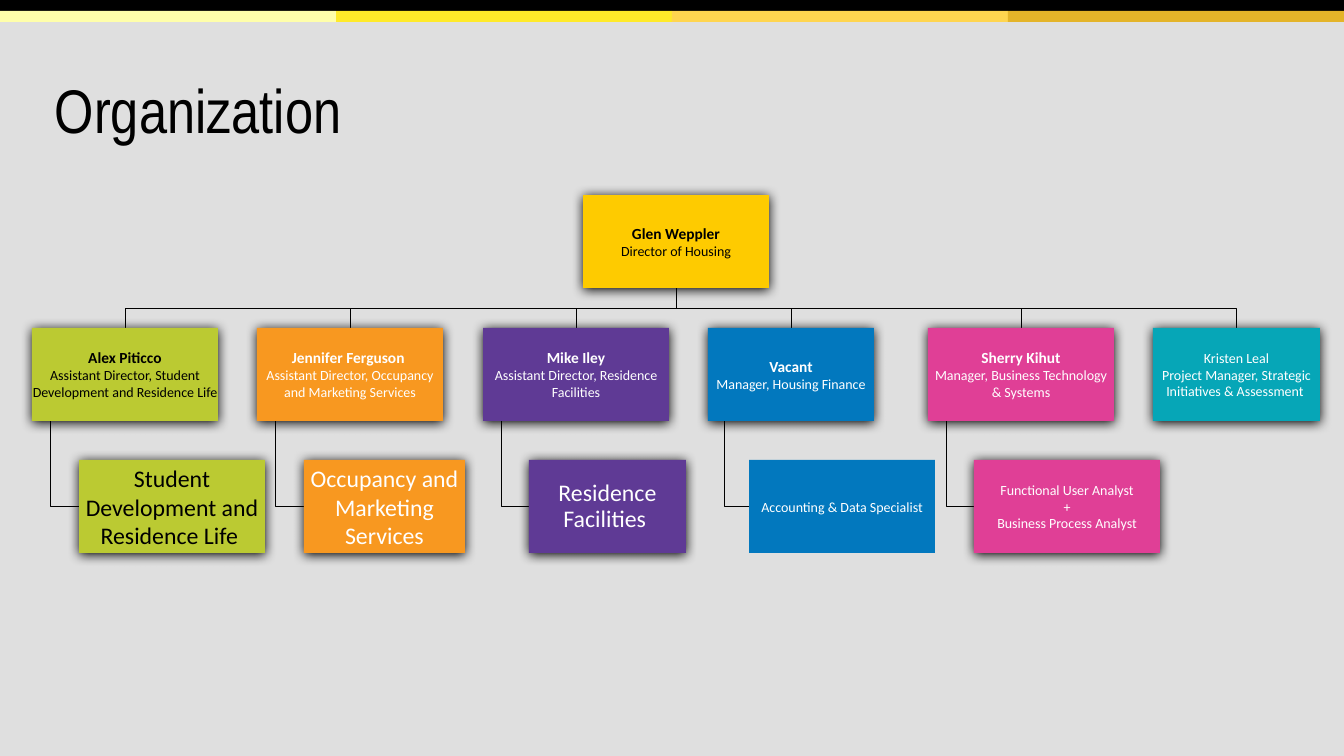
import pptx
import pptx.util
import pptx.dml.color
import pptx.enum.shapes
import pptx.enum.text
from lxml import etree

TITLE = "Organization"

# Text lines are (style, text) or (style, text, left shift of the centred line in px).
DIRECTOR = {"left": 583, "width": 186, "fill": "gold", "ink": "black", "lines": [
    ("name", "Glen Weppler", 9), ("role", "Director of Housing")]}

# Each branch: fill, ink, manager (left, width, lines), team (left, width, lines) or None.
BRANCHES = [
    ("lime", "black",
     (32, 186, [("name", "Alex Piticco", 12),
                ("role", "Assistant Director, Student Development and Residence Life")]),
     (79, 186, [("unit", "Student Development and Residence Life ")])),
    ("orange", "white",
     (257, 186, [("name", "Jennifer Ferguson "),
                 ("role", "Assistant Director, Occupancy and Marketing Services")]),
     (304, 161, [("unit", "Occupancy and Marketing Services")])),
    ("purple", "white",
     (483, 186, [("name", "Mike Iley"),
                 ("role", "Assistant Director, Residence Facilities")]),
     (529, 157, [("tight unit", "Residence Facilities ")])),
    ("blue", "white",
     (708, 166, [("name", "Vacant"), ("role", "Manager, Housing Finance")]),
     (749, 186, [("role", "Accounting & Data Specialist")])),
    ("pink", "white",
     (928, 186, [("name", "Sherry Kihut"),
                 ("role", "Manager, Business Technology & Systems")]),
     (974, 186, [("role", "Functional User Analyst"), ("role", "+"),
                 ("role", "Business Process Analyst")])),
    ("teal", "white",
     (1153, 167, [("role", "Kristen Leal"),
                  ("role", "Project Manager, Strategic Initiatives & Assessment ")]),
     None),
]
FLAT_UNITS = {"blue"}  # branches whose team box has no shadow

THEME = {
    "colors": {
        "background": "DFDFDF", "black": "000000", "white": "FFFFFF",
        "gold": "FECB00", "lime": "BBCA32", "orange": "F89820", "purple": "5F3A95",
        "blue": "0278BE", "pink": "E03F96", "teal": "06A6B7",
    },
    "stripes": ["FFFFAA", "FFEA29", "FFD54F", "E4B429"],
    "title": ("Arial Narrow", 44),
    "body": "Calibri",
    # style: size, bold, line spacing
    "styles": {"name": (11, True, 1.0), "role": (10, False, 1.0),
               "unit": (17, False, 1.0), "tight unit": (17, False, 0.9)},
}

PAGE_WIDTH, PAGE_HEIGHT = 1344, 756
BOX_HEIGHT = 93
DIRECTOR_TOP, MANAGER_TOP, TEAM_TOP = 195, 328, 460
EMU_PER_PX = 914400 / 100.8
DRAWING = "http://schemas.openxmlformats.org/drawingml/2006/main"


def px(length):
    return pptx.util.Emu(round(length * EMU_PER_PX))


def rgb(color):
    return pptx.dml.color.RGBColor.from_string(THEME["colors"].get(color, color))


def add_rect(page, left, top, width, height, color):
    rect = page.shapes.add_shape(pptx.enum.shapes.MSO_SHAPE.RECTANGLE,
                                 px(left), px(top), px(width), px(height))
    rect.shadow.inherit = False
    rect.fill.solid()
    rect.fill.fore_color.rgb = rgb(color)
    rect.line.fill.background()
    return rect


def add_shadow(shape):
    effects = shape._element.spPr.find(f"{{{DRAWING}}}effectLst")
    shadow = etree.SubElement(effects, f"{{{DRAWING}}}outerShdw", blurRad="107950",
                              dist="12700", dir="5400000", rotWithShape="0")
    etree.SubElement(shadow, f"{{{DRAWING}}}srgbClr", val=THEME["colors"]["black"])


def add_box(page, left, top, width, fill, ink, lines, shadow=True):
    box = add_rect(page, left, top, width, BOX_HEIGHT, fill)
    if shadow:
        add_shadow(box)
    frame = box.text_frame
    frame.word_wrap = True
    frame.vertical_anchor = pptx.enum.text.MSO_ANCHOR.MIDDLE
    frame.margin_left = frame.margin_right = pptx.util.Pt(0.5)
    frame.margin_top = frame.margin_bottom = pptx.util.Pt(0.5)
    for index, (style, text, *shift) in enumerate(lines):
        para = frame.add_paragraph() if index else frame.paragraphs[0]
        para.text = text
        para.alignment = pptx.enum.text.PP_ALIGN.CENTER
        if shift:
            # A hanging indent moves a centred line by half its length.
            para._p.get_or_add_pPr().set("marL", "0")
            para._p.get_or_add_pPr().set("indent", str(-px(2 * shift[0])))
        size, bold, spacing = THEME["styles"][style]
        para.line_spacing = spacing
        para.font.name = THEME["body"]
        para.font.size = pptx.util.Pt(size)
        para.font.bold = bold
        para.font.color.rgb = rgb(ink)


def add_elbow(page, start, *corners):
    builder = page.shapes.build_freeform(px(start[0]), px(start[1]))
    builder.add_line_segments([(px(x), px(y)) for x, y in corners], close=False)
    elbow = builder.convert_to_shape()
    elbow.shadow.inherit = False
    elbow.fill.background()
    elbow.line.color.rgb = rgb("black")
    elbow.line.width = pptx.util.Pt(0.5)


def add_backdrop(page):
    page.background.fill.solid()
    page.background.fill.fore_color.rgb = rgb("background")
    add_rect(page, 0, 0, PAGE_WIDTH, 13, "black")
    stripe_width = PAGE_WIDTH // len(THEME["stripes"])
    for index, color in enumerate(THEME["stripes"]):
        add_rect(page, index * stripe_width, 11, stripe_width, 11, color)


def add_title(page):
    box = page.shapes.add_textbox(px(45), px(75), px(1159), px(60))
    box.text_frame.word_wrap = True
    para = box.text_frame.paragraphs[0]
    para.text = TITLE
    para.line_spacing = 0.9
    family, size = THEME["title"]
    para.font.name = family
    para.font.size = pptx.util.Pt(size)
    para.font.color.rgb = rgb("black")


def add_lines(page):
    trunk = DIRECTOR["left"] + DIRECTOR["width"] / 2
    director_bottom = DIRECTOR_TOP + BOX_HEIGHT
    bus = (director_bottom + MANAGER_TOP) / 2
    for fill, ink, (left, width, lines), team in BRANCHES:
        center = left + width / 2
        add_elbow(page, (trunk, director_bottom), (trunk, bus),
                  (center, bus), (center, MANAGER_TOP))
        if team:
            stem = left + width / 10
            middle = TEAM_TOP + BOX_HEIGHT / 2
            add_elbow(page, (stem, MANAGER_TOP + BOX_HEIGHT),
                      (stem, middle), (team[0], middle))


def add_boxes(page):
    add_box(page, top=DIRECTOR_TOP, **DIRECTOR)
    for fill, ink, (left, width, lines), team in BRANCHES:
        add_box(page, left, MANAGER_TOP, width, fill, ink, lines)
        if team:
            left, width, lines = team
            add_box(page, left, TEAM_TOP, width, fill, ink, lines, fill not in FLAT_UNITS)


def main():
    deck = pptx.Presentation()
    deck.slide_width, deck.slide_height = px(PAGE_WIDTH), px(PAGE_HEIGHT)
    page = deck.slides.add_slide(deck.slide_layouts[6])
    add_backdrop(page)
    add_lines(page)
    add_boxes(page)
    add_title(page)
    deck.save("out.pptx")


if __name__ == "__main__":
    main()
